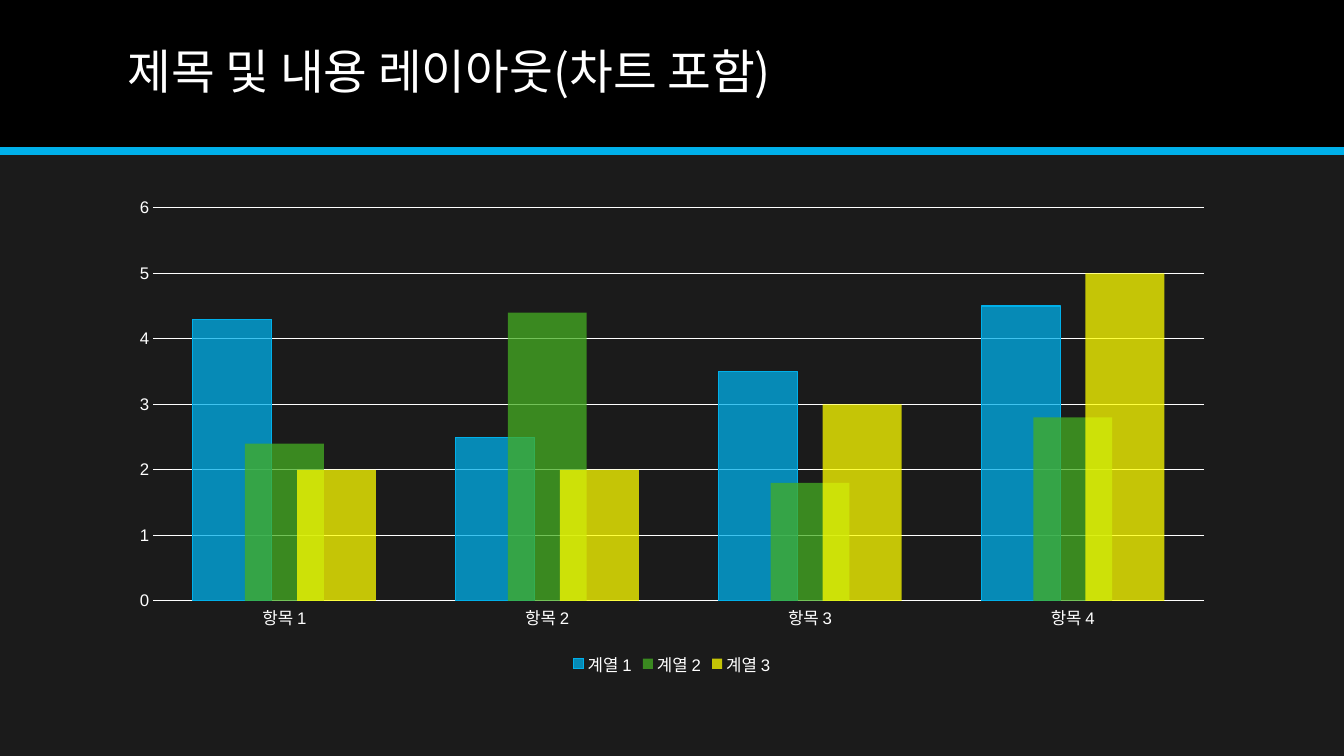
from lxml import etree
from pptx import Presentation
from pptx.chart.data import CategoryChartData
from pptx.dml.color import RGBColor
from pptx.enum.chart import XL_CHART_TYPE as ChartType, XL_LEGEND_POSITION as LegendSpot, XL_TICK_MARK as Tick
from pptx.enum.shapes import MSO_CONNECTOR as Connector, MSO_SHAPE as Shape
from pptx.enum.text import MSO_ANCHOR as Anchor, MSO_AUTO_SIZE as AutoSize, PP_ALIGN as Align
from pptx.oxml.ns import qn
from pptx.util import Pt

PX = 9525  # 96 px to the inch
WIDTH, HEIGHT = 1280, 720
LEFT, CONTENT_WIDTH = 112, 1056
BAND_HEIGHT = 144

BLACK = RGBColor(0x00, 0x00, 0x00)
CHARCOAL = RGBColor(0x1B, 0x1B, 0x1B)
WHITE = RGBColor(0xFF, 0xFF, 0xFF)
BLUE = RGBColor(0x00, 0xB0, 0xEA)
GREEN = RGBColor(0x45, 0xAE, 0x22)
YELLOW = RGBColor(0xFF, 0xFF, 0x00)

TITLE_FONT = "Noto Sans CJK KR"
CHART_FONT = "Arial"


def px(*lengths):
    return [length * PX for length in lengths]


def style_font(font, name, size):
    font.name = name
    font.size = Pt(size)
    font.color.rgb = WHITE


# Page
deck = Presentation()
deck.slide_width, deck.slide_height = px(WIDTH, HEIGHT)
page = deck.slides.add_slide(deck.slide_layouts[5])
page.background.fill.solid()
page.background.fill.fore_color.rgb = CHARCOAL

# Header band and rule, behind the title
title = page.shapes.title
band = page.shapes.add_shape(Shape.RECTANGLE, *px(0, 0, WIDTH, BAND_HEIGHT))
band.shadow.inherit = False
band.fill.solid()
band.fill.fore_color.rgb = BLACK
band.line.fill.background()
rule = page.shapes.add_connector(Connector.STRAIGHT, *px(0, BAND_HEIGHT, WIDTH, BAND_HEIGHT))
rule.line.color.rgb = BLUE
rule.line.width = Pt(6)
etree.SubElement(rule.element.spPr, qn("a:effectLst"))
for backdrop in (band, rule):
    title.element.addprevious(backdrop.element)

# Title
title.left, title.top, title.width, title.height = px(LEFT, 13, CONTENT_WIDTH, 115)
frame = title.text_frame
frame.text = "제목 및 내용 레이아웃(차트 포함)"
frame.word_wrap = True
frame.auto_size = AutoSize.NONE
frame.vertical_anchor = Anchor.MIDDLE
para = frame.paragraphs[0]
para.alignment = Align.LEFT
para.line_spacing = 0.9
style_font(para.font, TITLE_FONT, 34)
latin = para.font.fill and para.runs[0].font
latin.language_id = None
for latin_tag in list(title.element.iter(qn("a:latin"))):
    east_asian = etree.Element(qn("a:ea"), typeface=TITLE_FONT)
    latin_tag.addnext(east_asian)

# Chart data
data = CategoryChartData()
data.categories = [f"항목 {number}" for number in range(1, 5)]
data.add_series("계열 1", (4.3, 2.5, 3.5, 4.5))
data.add_series("계열 2", (2.4, 4.4, 1.8, 2.8))
data.add_series("계열 3", (2, 2, 3, 5))
chart = page.shapes.add_chart(
    ChartType.COLUMN_CLUSTERED, *px(LEFT, 180, CONTENT_WIDTH, 468), data
).chart
chart.has_title = False
style_font(chart.font, CHART_FONT, 10)

# Columns
plot = chart.plots[0]
plot.vary_by_categories = False
plot.gap_width = 101
plot.overlap = 34
for series, color in zip(plot.series, (BLUE, GREEN, YELLOW)):
    fill = series.format.fill
    fill.solid()
    fill.fore_color.rgb = color
    tint = series.format.fill.fore_color and next(series.format.line and series._element.iter(qn("a:srgbClr")))
    etree.SubElement(tint, qn("a:alpha"), val="75000")
    series.format.line.fill.background()
first_line = plot.series[0].format.line
first_line.color.rgb = BLUE
first_line.width = Pt(0.75)

# Axes
for axis in (chart.category_axis, chart.value_axis):
    axis.major_tick_mark = axis.minor_tick_mark = Tick.NONE
    style_font(axis.tick_labels.font, CHART_FONT, 12)
value_axis = chart.value_axis
value_axis.minimum_scale, value_axis.maximum_scale, value_axis.major_unit = 0, 6, 1
value_axis.format.line.fill.background()
value_axis.has_major_gridlines = True
for line in (chart.category_axis.format.line, value_axis.major_gridlines.format.line):
    line.color.rgb = WHITE
    line.width = Pt(0.75)

# Legend
chart.has_legend = True
chart.legend.position = LegendSpot.BOTTOM
chart.legend.include_in_layout = False
style_font(chart.legend.font, CHART_FONT, 12)

deck.save("out.pptx")
